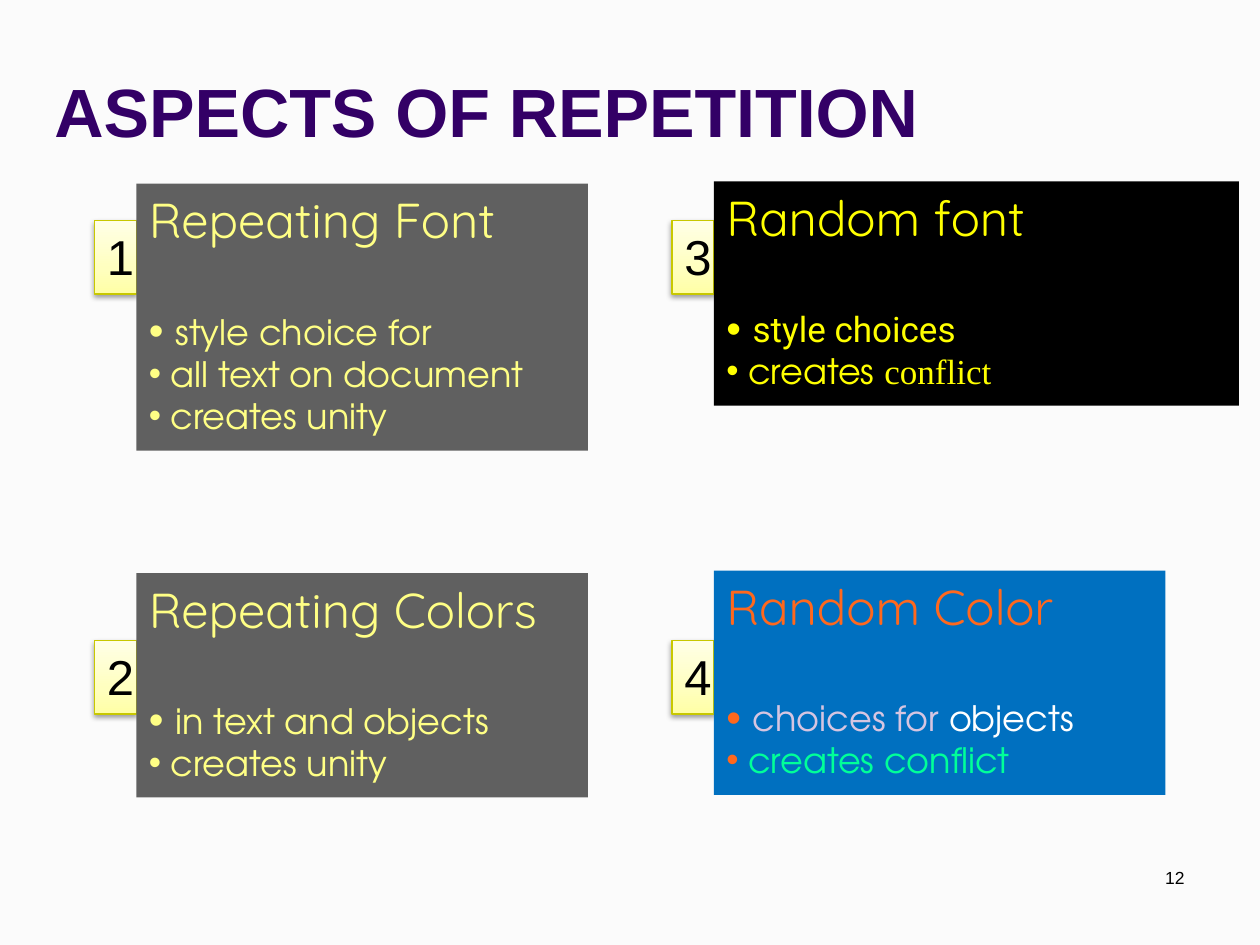
from lxml import etree
from pptx import Presentation
from pptx import util as u
from pptx.dml.color import RGBColor
from pptx.enum import shapes, text
from pptx.oxml.ns import qn

COLORS = {
    "paper": "FBFBFB", "title": "330066", "ink": "000000", "badge_line": "C8C800",
    "badge_low": "FFFFA5", "badge_mid": "FFFFBF", "badge_high": "FFFFE7",
    "gray": "606060", "cream": "FFFF85", "yellow": "FFFF00", "blue": "0070C0",
    "orange": "FF681D", "lilac": "D6C5E1", "white": "FFFFFF", "green": "00FF99",
}
BODY = "TeX Gyre Adventor"


def add_xml(parent, tag, **attributes):
    """Append a drawing element and return it."""
    return etree.SubElement(parent, qn(tag), attributes)


class Deck:
    """Holds the style and the current slide."""

    frame_format = {"word_wrap": True, "auto_size": text.MSO_AUTO_SIZE.NONE,
                    "vertical_anchor": text.MSO_ANCHOR.TOP}

    def __init__(self, width, height):
        """Open a presentation with one blank slide."""
        self.prs = Presentation()
        self.prs.slide_width, self.prs.slide_height = u.Pt(width), u.Pt(height)
        self.slide = self.prs.slides.add_slide(self.prs.slide_layouts[6])
        self.paint(self.slide.background.fill, "paper")

    def paint(self, fill, color):
        """Fill with a named colour."""
        fill.solid()
        fill.fore_color.rgb = RGBColor.from_string(COLORS[color])

    def format_frame(self, shape, **changes):
        """Apply the frame format and return the text frame."""
        for name, value in {**self.frame_format, **changes}.items():
            setattr(shape.text_frame, name, value)
        return shape.text_frame

    def add_words(self, paragraph, words, size, color, font="Arial", bold=False, align="LEFT"):
        """Add one run to a paragraph."""
        paragraph.alignment = getattr(text.PP_ALIGN, align)
        run = paragraph.add_run()
        run.text = words
        for name, value in {"size": u.Pt(size), "name": font, "bold": bold}.items():
            setattr(run.font, name, value)
        run.font.color.rgb = RGBColor.from_string(COLORS[color])

    def label(self, box, words, size, color, anchor="TOP", **style):
        """Add a text box with one line."""
        shape = self.slide.shapes.add_textbox(*map(u.Pt, box))
        frame = self.format_frame(shape, vertical_anchor=getattr(text.MSO_ANCHOR, anchor))
        self.add_words(frame.paragraphs[0], words, size, color, **style)

    def rectangle(self, box):
        """Add a rectangle without a shadow."""
        shape = self.slide.shapes.add_shape(shapes.MSO_SHAPE.RECTANGLE, *map(u.Pt, box))
        shape.shadow.inherit = False
        return shape

    def badge(self, left, top, number):
        """Add a shaded number tag."""
        shape = self.rectangle((left, top, 24, 42))
        shape.fill.gradient()
        shape.fill.gradient_angle = 90
        properties = shape._element.spPr
        stops = properties.find(qn("a:gradFill")).find(qn("a:gsLst"))
        for stop in list(stops):
            stops.remove(stop)
        for percent, color in ((0, "badge_low"), (35, "badge_mid"), (100, "badge_high")):
            stop = add_xml(stops, "a:gs", pos=str(percent * 1000))
            add_xml(stop, "a:srgbClr", val=COLORS[color])
        self.paint(shape.line.fill, "badge_line")
        shape.line.width = u.Pt(0.75)
        shadow = add_xml(properties.find(qn("a:effectLst")), "a:outerShdw",
                         blurRad=str(u.Pt(3.1)), dist=str(u.Pt(1.6)),
                         dir="5400000", rotWithShape="0")
        add_xml(add_xml(shadow, "a:srgbClr", val=COLORS["ink"]), "a:alpha", val="38000")
        self.add_words(self.format_frame(shape).paragraphs[0], number, 28, "ink")

    def bullet(self, paragraph, color, indent, percent):
        """Give a paragraph a round bullet."""
        properties = paragraph._p.get_or_add_pPr()
        properties.set("marL", str(u.Pt(indent)))
        properties.set("indent", str(-u.Pt(indent)))
        add_xml(add_xml(properties, "a:buClr"), "a:srgbClr", val=COLORS[color])
        add_xml(properties, "a:buSzPct", val=str(percent * 1000))
        add_xml(properties, "a:buFont", typeface="Arial")
        add_xml(properties, "a:buChar", char="•")

    def card(self, box, fill, color, heading, points):
        """Add a panel with a heading and bulleted points."""
        shape = self.rectangle(box)
        self.paint(shape.fill, fill)
        shape.line.fill.background()
        frame = self.format_frame(shape)
        self.add_words(frame.paragraphs[0], heading, 28, color, "Quicksand")
        for index, runs in enumerate(points):
            paragraph = frame.add_paragraph()
            first = index == 0
            paragraph.space_before = u.Pt(35 if first else 0)
            self.bullet(paragraph, color, 15 if first else 12.5, 120 if first else 100)
            for words, font, tint in runs:
                self.add_words(paragraph, words, 20, tint or color, font)


def main():
    """Build the slide."""
    deck = Deck(720, 540)
    deck.label((24, 12, 684, 78), "ASPECTS OF REPETITION", 39, "title", "BOTTOM", bold=True)

    columns, rows = (54, 384), (126, 366)
    for index, number in enumerate("1234"):
        deck.badge(columns[index // 2], rows[index % 2], number)

    cards = (
        ((78, 105, 258, 152.6), "gray", "cream", "Repeating Font",
         ([("style choice for", BODY, None)],
          [("all text on document", BODY, None)],
          [("creates unity", BODY, None)])),
        ((78, 327.5, 258, 128.2), "gray", "cream", "Repeating Colors",
         ([("in text and objects", BODY, None)],
          [("creates unity", BODY, None)])),
        ((408, 103.6, 300, 128.2), "ink", "yellow", "Random font",
         ([("style choices", "Roboto", None)],
          [("creates ", BODY, None), ("conflict", "Times New Roman", None)])),
        ((408, 326, 258, 128.2), "blue", "orange", "Random Color",
         ([("choices for ", BODY, "lilac"), ("objects", BODY, "white")],
          [("creates conflict", BODY, "green")])),
    )
    for card in cards:
        deck.card(*card)

    deck.label((516, 492, 168, 36), "12", 10, "ink", align="RIGHT")
    deck.prs.save("out.pptx")


if __name__ == "__main__":
    main()
